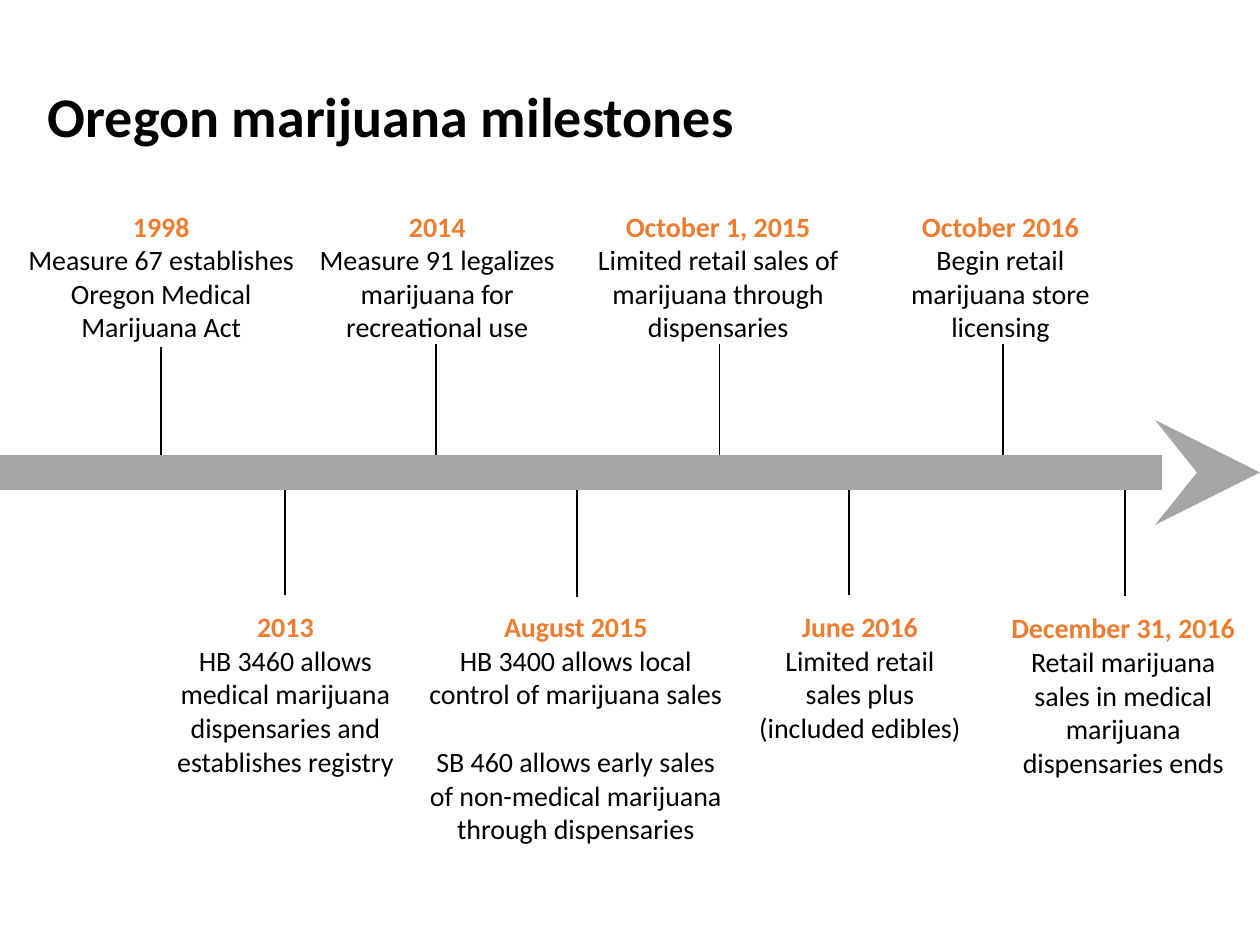
from lxml import etree
from pptx import Presentation
from pptx.dml.color import RGBColor
from pptx.enum.shapes import MSO_CONNECTOR
from pptx.enum.text import PP_ALIGN
from pptx.oxml.ns import qn
from pptx.util import Inches, Pt

STRAIGHT = MSO_CONNECTOR.STRAIGHT
LEFT, CENTER = PP_ALIGN.LEFT, PP_ALIGN.CENTER
COLORS = {"text": "000000", "date": "ED7D31", "axis": "A6A6A6"}
FONT = "Calibri"
LINE_GAP = 19.5  # points, one line of 16 pt text
STEM_LENGTH = 1.03

# Stem x, stem top, box (left, top, width, height), date, descriptions
MILESTONES = [
    (8.93, 3.70, (7.91, 4.80, 2.01, 1.45), "December 31, 2016",
     ["Retail marijuana sales in medical marijuana dispensaries ends"]),
    (6.74, 3.69, (5.91, 4.79, 1.83, 1.18), "June 2016",
     ["Limited retail sales plus (included edibles)"]),
    (7.96, 2.73, (6.89, 1.61, 2.10, 1.18), "October 2016",
     ["Begin retail marijuana store licensing"]),
    (5.71, 2.73, (4.30, 1.61, 2.80, 1.18), "October 1, 2015",
     ["Limited retail sales of marijuana through dispensaries"]),
    (1.28, 2.75, (0.05, 1.61, 2.46, 1.18), "1998",
     ["Measure 67 establishes Oregon Medical Marijuana Act"]),
    (2.26, 3.69, (1.19, 4.79, 2.15, 1.45), "2013",
     ["HB 3460 allows medical marijuana dispensaries and establishes registry"]),
    (3.46, 2.73, (2.22, 1.61, 2.50, 1.18), "2014",
     ["Measure 91 legalizes marijuana for recreational use"]),
    (4.58, 3.71, (3.27, 4.79, 2.60, 1.99), "August 2015",
     ["HB 3400 allows local control of marijuana sales",
      "SB 460 allows early sales of non-medical marijuana through dispensaries"]),
]


def add_line(page, start, end, color, width):
    line = page.shapes.add_connector(
        STRAIGHT, *(Inches(value) for value in start + end))
    line.line.color.rgb = RGBColor.from_string(COLORS[color])
    line.line.width = Pt(width)
    etree.SubElement(line._element.spPr, qn("a:effectLst"))
    return line


def add_text(page, frame, paragraphs, align):
    """Each paragraph is (text, size, color, bold, space before)."""
    box = page.shapes.add_textbox(*(Inches(value) for value in frame))
    box.text_frame.word_wrap = True
    for index, (text, size, color, bold, gap) in enumerate(paragraphs):
        para = (box.text_frame.add_paragraph() if index
                else box.text_frame.paragraphs[0])
        para.alignment = align
        if gap:
            para.space_before = Pt(gap)
        span = para.add_run()
        span.text = text
        span.font.name = FONT
        span.font.size = Pt(size)
        span.font.bold = bold
        span.font.color.rgb = RGBColor.from_string(COLORS[color])


def add_milestone(page, stem_x, stem_top, frame, date, descriptions):
    add_line(page, (stem_x, stem_top), (stem_x, stem_top + STEM_LENGTH), "text", 1)
    paragraphs = [(date, 16, "date", True, 0)]
    for index, description in enumerate(descriptions):
        paragraphs.append((description, 16, "text", False, LINE_GAP if index else 0))
    add_text(page, frame, paragraphs, CENTER)


def add_title(page, frame):
    add_text(page, frame,
             [("Oregon marijuana milestones", 32, "text", True, 0)], LEFT)


def add_time_axis(page, left, right, y):
    axis = add_line(page, (left, y), (right, y), "axis", 20)
    etree.SubElement(axis.line._get_or_add_ln(), qn("a:tailEnd"), type="stealth")


def main():
    deck = Presentation()
    deck.slide_width, deck.slide_height = Inches(10), Inches(7.5)
    page = deck.slides.add_slide(deck.slide_layouts[6])

    # Milestones, with the axis drawn over their stems
    for milestone in MILESTONES:
        add_milestone(page, *milestone)
    add_title(page, (0.28, 0.6, 6.05, 0.64))
    add_time_axis(page, 0, 10, 3.75)

    deck.save("out.pptx")


if __name__ == "__main__":
    main()
